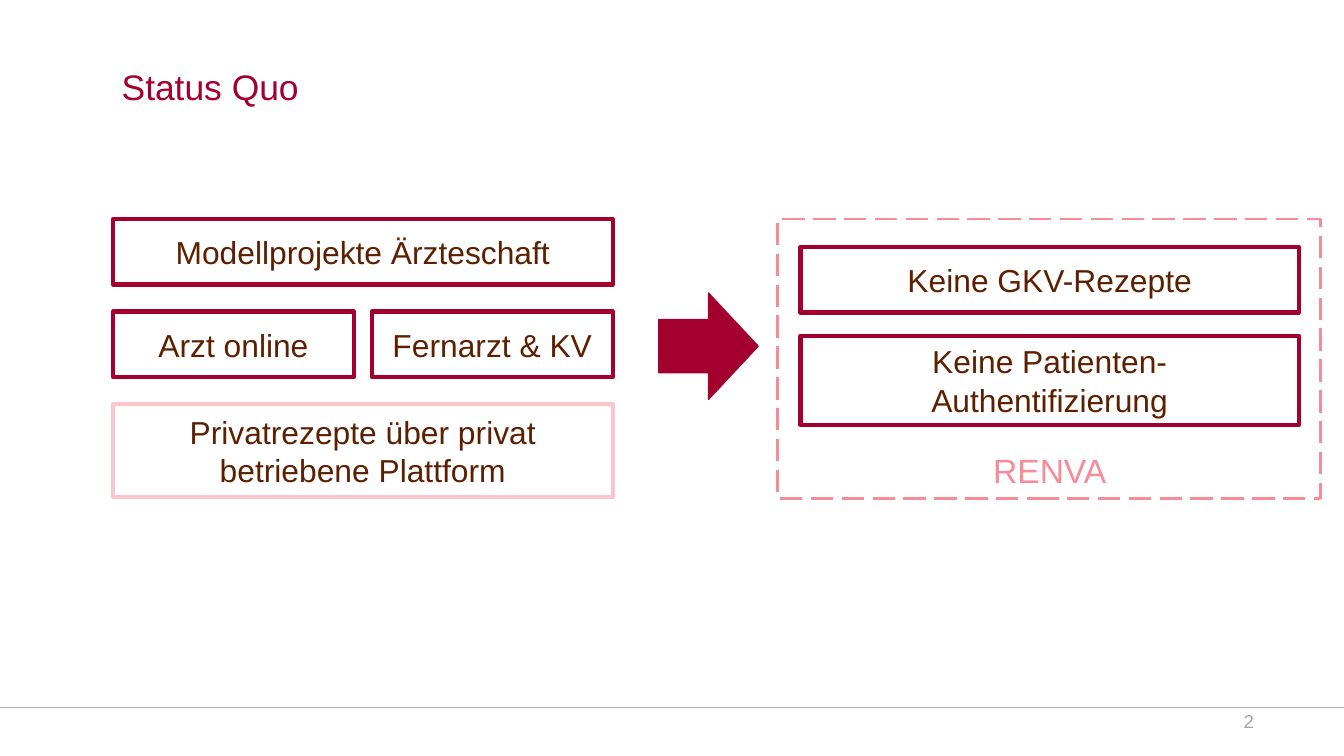
from pptx import Presentation
from pptx.dml.color import RGBColor as Rgb
from pptx.enum.dml import MSO_LINE as Dash
from pptx.enum.shapes import MSO_CONNECTOR as Link, MSO_SHAPE as Kind
from pptx.enum.text import MSO_ANCHOR as Anchor, MSO_AUTO_SIZE as Fit, PP_ALIGN as Align
from pptx.oxml.ns import qn
from pptx.util import Cm, Pt
from lxml.etree import SubElement

HUES = {
    "red": "A30030", "pink": "F78B98", "pale": "FBC5CC",
    "brown": "5C1F00", "grey": "A6A6A6", "rule": "B7ABAA",
}
GAP = 0.51
ROW = 1.24


def hue(name):
    return Rgb.from_string(HUES[name])


def write(frame, text, size, color, align, anchor):
    frame.word_wrap = True
    frame.auto_size = Fit.NONE
    frame.vertical_anchor = anchor
    para = frame.paragraphs[0]
    para.text = text
    para.alignment = align
    para.font.name = "Arial"
    para.font.size = Pt(size)
    para.font.color.rgb = hue(color)


def inset(frame):
    frame.margin_left = frame.margin_right = Cm(0.18)
    frame.margin_top = frame.margin_bottom = Cm(0.1)


def add_box(slide, box, text="", line="red", width=2.25, kind=Kind.RECTANGLE):
    shape = slide.shapes.add_shape(kind, *map(Cm, box))
    shape.shadow.inherit = False
    shape.fill.background()
    shape.line.color.rgb = hue(line)
    shape.line.width = Pt(width)
    if text:
        write(shape.text_frame, text, 17, "brown", Align.CENTER, Anchor.MIDDLE)
    return shape


def add_label(slide, box, text, size, color, align, anchor):
    label = slide.shapes.add_textbox(*map(Cm, box))
    write(label.text_frame, text, size, color, align, anchor)
    return label


def add_title(slide, box, text):
    title = slide.shapes.title
    title.left, title.top, title.width, title.height = map(Cm, box)
    write(title.text_frame, text, 19, "red", Align.LEFT, Anchor.TOP)
    inset(title.text_frame)


def add_models(slide, box):
    x, y, w, h = box
    add_box(slide, (x, y, w, ROW), "Modellprojekte Ärzteschaft")
    # Two projects side by side
    y += ROW + GAP
    half = 4.55
    add_box(slide, (x, y, half, ROW), "Arzt online")
    add_box(slide, (x + w - half, y, half, ROW), "Fernarzt & KV")
    # Private platform fills the rest
    used = 2 * (ROW + GAP)
    add_box(slide, (x, y + ROW + GAP, w, h - used),
            "Privatrezepte über privat betriebene Plattform", "pale")


def add_arrow(slide, box):
    arrow = add_box(slide, box, width=0.75, kind=Kind.RIGHT_ARROW)
    arrow.fill.solid()
    arrow.fill.fore_color.rgb = hue("red")


def add_gaps(slide, box):
    x, y, w, h = box
    left, wide = x + 0.43, w - 0.84
    add_box(slide, (left, y + 0.53, wide, ROW), "Keine GKV-Rezepte")
    add_box(slide, (left, y + 2.21, wide, 1.68), "Keine Patienten-Authentifizierung")
    # Dashed frame with its name
    add_box(slide, box, line="pink", width=1.5).line.dash_style = Dash.LONG_DASH
    add_label(slide, (left, y + h - 1.04, wide, 1.02), "RENVA", 18, "pink",
              Align.CENTER, Anchor.TOP)


def add_footer(slide, box):
    x, y, w, h = box
    rule = slide.shapes.add_connector(Link.STRAIGHT, Cm(x), Cm(y), Cm(x + w), Cm(y))
    rule.line.color.rgb = hue("rule")
    rule.line.width = Pt(0.75)
    SubElement(rule._element.spPr, qn("a:effectLst"))
    # Page number
    page = add_label(slide, (x + w - 4.11, y, 2.59, h), "2", 10, "grey",
                     Align.RIGHT, Anchor.MIDDLE)
    inset(page.text_frame)


def main():
    deck = Presentation()
    deck.slide_width, deck.slide_height = Cm(25.4), Cm(14.29)
    slide = deck.slides.add_slide(deck.slide_layouts[5])
    add_footer(slide, (0, 13.37, 25.4, 0.53))
    add_title(slide, (2.12, 1.13, 22, 1.42), "Status Quo")
    add_models(slide, (2.14, 4.14, 9.44, 5.26))
    add_arrow(slide, (12.45, 5.54, 1.88, 2.01))
    add_gaps(slide, (14.7, 4.14, 10.26, 5.28))
    deck.save("out.pptx")


if __name__ == "__main__":
    main()
